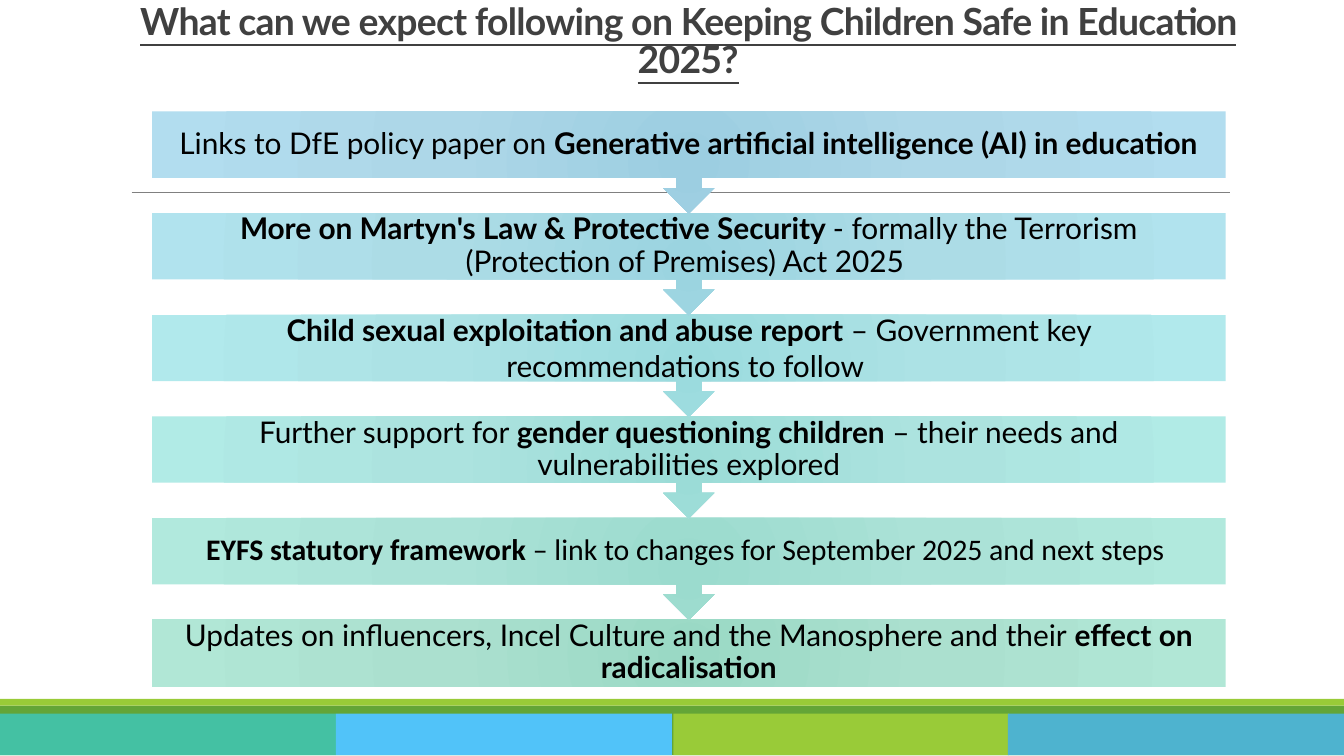
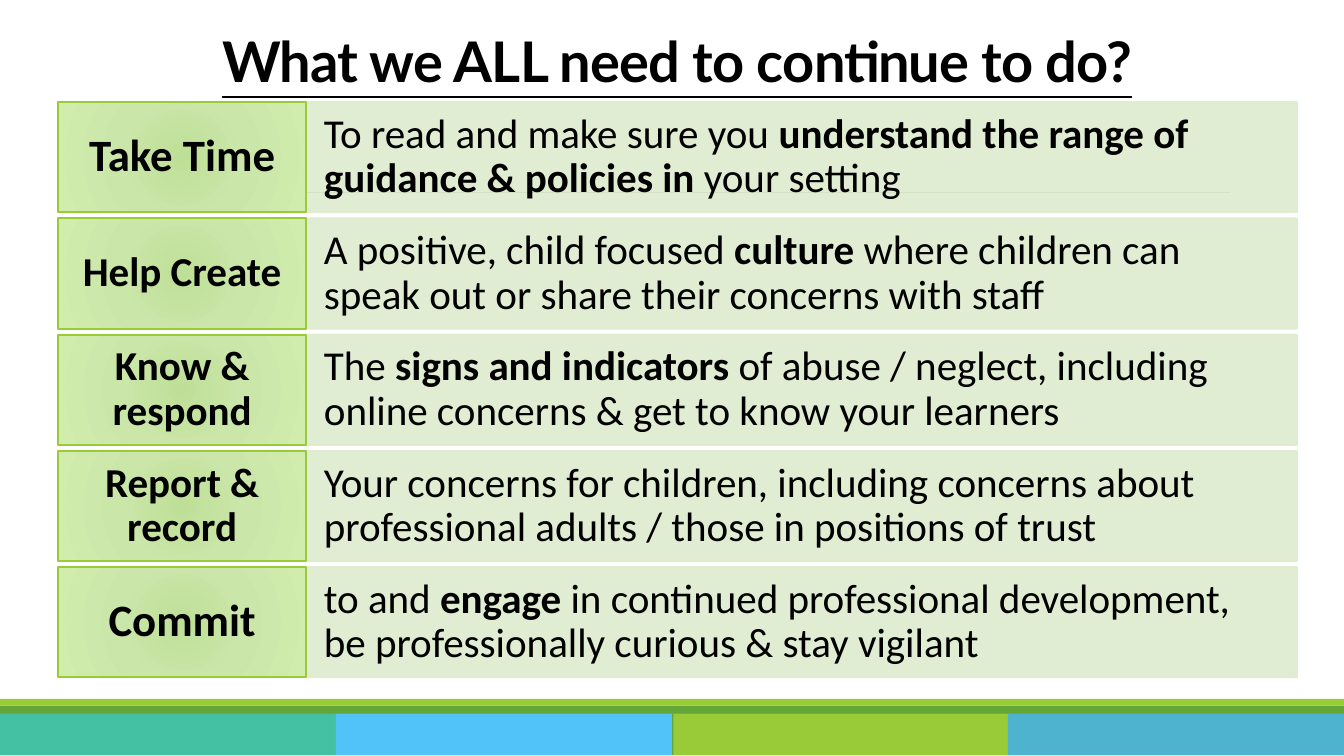
from dataclasses import dataclass

from lxml import etree
from pptx import Presentation
from pptx.dml.color import RGBColor
from pptx.enum.shapes import MSO_CONNECTOR, MSO_SHAPE
from pptx.enum.text import MSO_ANCHOR, PP_ALIGN
from pptx.oxml.ns import qn
from pptx.util import Inches, Pt

RECTANGLE = MSO_SHAPE.RECTANGLE
DOWN_CALLOUT = MSO_SHAPE.DOWN_ARROW_CALLOUT
STRAIGHT = MSO_CONNECTOR.STRAIGHT
MIDDLE, BOTTOM = MSO_ANCHOR.MIDDLE, MSO_ANCHOR.BOTTOM
LEFT, CENTER = PP_ALIGN.LEFT, PP_ALIGN.CENTER

SLIDE_WIDTH = Inches(10)
SLIDE_HEIGHT = SLIDE_WIDTH * 9 // 16

HEADING_FONT = "Lato"
BODY_FONT = "Calibri"
BLACK = "000000"
DARK_GREY = "404040"
RULE_GREY = "808080"
GREEN = "63A537"
LIME = "99CB38"
PALE_GREEN = "DEECCE"
LABEL_GRADIENT = ("BEDF97", "CAE6A9", "D0EDAE")
GRADIENT_STOPS = (0, 45, 100)
PANEL_OPACITY = 90


@dataclass(frozen=True)
class Box:
    left: float
    top: float
    width: float
    height: float

    def lengths(self):
        return tuple(Inches(n) for n in (self.left, self.top, self.width, self.height))


@dataclass(frozen=True)
class Band:
    box: Box
    color: str


@dataclass(frozen=True)
class Step:
    text: str
    gradient: tuple[str, str, str]
    font: str = HEADING_FONT
    line_spacing: float = 0.9


@dataclass(frozen=True)
class Duty:
    label: str
    text: str
    label_size: int = 22


BANDS = (
    Band(Box(0, 5.25, 10, 0.37), GREEN),
    Band(Box(0, 5.2, 10, 0.05), LIME),
    Band(Box(0, 5.31, 2.5, 0.31), "44C1A3"),
    Band(Box(2.5, 5.31, 2.5, 0.31), "51C3F9"),
    Band(Box(5.01, 5.31, 2.5, 0.31), LIME),
    Band(Box(7.5, 5.31, 2.5, 0.31), "4EB3CF"),
)

# Text between double asterisks is bold.
STEPS = (
    Step("Links to DfE policy paper on "
         "**Generative artificial intelligence (AI) in education**",
         ("9CCEE1", "ADD7E8", "B2DDEF")),
    Step("**More on Martyn's Law & Protective Security **"
         "- formally the Terrorism (Protection of Premises) Act 2025 ",
         ("9BD4E0", "ACDCE6", "B1E3EE")),
    Step("**Child sexual exploitation and abuse report **"
         "– Government key recommendations to follow ",
         ("9BDBDE", "ACE2E5", "B1E9EC"), line_spacing=1.0),
    Step("Further support for **gender questioning children **"
         "– their needs and vulnerabilities explored",
         ("9BDCD7", "ACE3DF", "B1EBE6")),
    Step("**EYFS statutory framework**"
         " – link to changes for September 2025 and next steps ",
         ("9BDBCE", "ABE2D7", "B1E9DD"), font=BODY_FONT),
    Step("Updates on influencers, Incel Culture and the Manosphere and their "
         "**effect on radicalisation**",
         ("9AD9C5", "ABE0CF", "B1E7D6")),
)
STEP_TOP, STEP_PITCH = 0.83, (4.61 - 0.83) / 5
STEP_HEIGHT, LAST_STEP_HEIGHT = 0.76, 0.5

DUTIES = (
    Duty("Take Time",
         "To read and make sure you **understand the range of guidance & policies in**"
         " your setting", 24),
    Duty("Help Create",
         "A positive, child focused **culture** where children can speak out "
         "or share their concerns with staff"),
    Duty("Know & respond",
         "The **signs and indicators **of abuse / neglect, including online concerns "
         "& get to know your learners"),
    Duty("Report & record",
         "Your concerns for children, including concerns about professional adults "
         "/ those in positions of trust"),
    Duty("Commit",
         "to and **engage** in continued professional development, "
         "be professionally curious & stay vigilant", 24),
)
DUTY_TOP, DUTY_PITCH, DUTY_HEIGHT = 0.76, (4.22 - 0.76) / 4, 0.82


def rgb(color: str) -> RGBColor:
    return RGBColor.from_string(color)


def write(shape, text: str, *, size: float, font: str = BODY_FONT, color: str = BLACK,
          bold: bool = False, underline: bool = False, tracking: float = 0,
          align=CENTER, anchor=MIDDLE, line_spacing: float = 0.9,
          insets: tuple[float, float, float, float] = (0.1, 0.0, 0.1, 0.0)) -> None:
    """Fill a shape with one paragraph; insets are left, top, right, bottom."""
    frame = shape.text_frame
    frame.word_wrap = True
    frame.vertical_anchor = anchor
    (frame.margin_left, frame.margin_top,
     frame.margin_right, frame.margin_bottom) = (Inches(n) for n in insets)
    paragraph = frame.paragraphs[0]
    paragraph.alignment = align
    paragraph.line_spacing = line_spacing
    for index, part in enumerate(text.split("**")):
        if not part:
            continue
        run = paragraph.add_run()
        run.text = part
        run.font.name = font
        run.font.size = Pt(size)
        run.font.bold = bold or index % 2 == 1
        run.font.underline = underline
        run.font.color.rgb = rgb(color)
        if tracking:
            run._r.get_or_add_rPr().set("spc", str(round(tracking * 100)))


def add_box(slide, box: Box, *, kind=RECTANGLE, fill: str | None = None,
            line: str | None = None):
    shape = slide.shapes.add_shape(kind, *box.lengths())
    shape.shadow.inherit = False
    if fill:
        shape.fill.solid()
        shape.fill.fore_color.rgb = rgb(fill)
    if line:
        shape.line.color.rgb = rgb(line)
        shape.line.width = Pt(1)
    else:
        shape.line.fill.background()
    return shape


def set_radial_gradient(shape, colors: tuple[str, str, str]) -> None:
    shape.fill.gradient()
    gradient = shape._element.spPr.find(qn("a:gradFill"))
    for child in list(gradient):
        gradient.remove(child)
    stops = etree.SubElement(gradient, qn("a:gsLst"))
    for position, color in zip(GRADIENT_STOPS, colors):
        stop = etree.SubElement(stops, qn("a:gs"), pos=str(position * 1000))
        etree.SubElement(stop, qn("a:srgbClr"), val=color)
    circle = etree.SubElement(gradient, qn("a:path"))
    circle.set("path", "circle")
    focus = etree.SubElement(circle, qn("a:fillToRect"))
    for side in "ltrb":
        focus.set(side, "100000")


def set_opacity(shape, percent: int) -> None:
    """Apply one opacity to the fill and the line of a shape."""
    for color in shape._element.spPr.iter(qn("a:srgbClr")):
        etree.SubElement(color, qn("a:alpha"), val=str(percent * 1000))


def add_base_slide(presentation):
    """Add a blank slide with the shared rule and footer bands."""
    slide = presentation.slides.add_slide(presentation.slide_layouts[6])
    for band in BANDS:
        add_box(slide, band.box, fill=band.color)
    rule = slide.shapes.add_connector(
        STRAIGHT, Inches(0.98), Inches(1.43), Inches(9.15), Inches(1.43))
    rule.line.color.rgb = rgb(RULE_GREY)
    rule.line.width = Pt(0.5)
    etree.SubElement(rule._element.spPr, qn("a:effectLst"))
    return slide


def add_title(slide, text: str, box: Box, size: float, color: str) -> None:
    title = slide.shapes.add_textbox(*box.lengths())
    write(title, text, size=size, font=HEADING_FONT, color=color, bold=True,
          underline=True, tracking=-0.4, anchor=BOTTOM, line_spacing=0.85,
          insets=(0.1, 0.05, 0.1, 0.05))


def add_step(slide, step: Step, index: int) -> None:
    is_last = index == len(STEPS) - 1
    height = LAST_STEP_HEIGHT if is_last else STEP_HEIGHT
    shape = add_box(slide, Box(1.13, STEP_TOP + index * STEP_PITCH, 7.99, height),
                    kind=RECTANGLE if is_last else DOWN_CALLOUT)
    set_radial_gradient(shape, step.gradient)
    write(shape, step.text, size=16, font=step.font, line_spacing=step.line_spacing,
          insets=(0.13, 0, 0.13, 0))


def add_duty(slide, duty: Duty, index: int) -> None:
    top = DUTY_TOP + index * DUTY_PITCH
    panel = add_box(slide, Box(2.27, top, 7.38, DUTY_HEIGHT),
                    fill=PALE_GREEN, line=PALE_GREEN)
    set_opacity(panel, PANEL_OPACITY)
    write(panel, duty.text, size=22, align=LEFT, insets=(0.14, 0, 0.2, 0))
    label = add_box(slide, Box(0.43, top, 1.85, DUTY_HEIGHT), line=LIME)
    set_radial_gradient(label, LABEL_GRADIENT)
    write(label, duty.label, size=duty.label_size, bold=True)


def build_expectations_slide(presentation) -> None:
    slide = add_base_slide(presentation)
    add_title(slide, "What can we expect following on Keeping Children Safe in Education 2025?",
              Box(0.58, 0.2, 9.08, 0.45), 20, DARK_GREY)
    # Bottom step first, so that each arrow lies over the step below it.
    for index, step in reversed(list(enumerate(STEPS))):
        add_step(slide, step, index)


def build_duties_slide(presentation) -> None:
    slide = add_base_slide(presentation)
    add_title(slide, "What we ALL need to continue to do?",
              Box(0.69, -0.01, 8.7, 0.76), 30, BLACK)
    for index, duty in enumerate(DUTIES):
        add_duty(slide, duty, index)


def main() -> None:
    presentation = Presentation()
    presentation.slide_width = SLIDE_WIDTH
    presentation.slide_height = SLIDE_HEIGHT
    build_expectations_slide(presentation)
    build_duties_slide(presentation)
    presentation.save("out.pptx")


if __name__ == "__main__":
    main()
